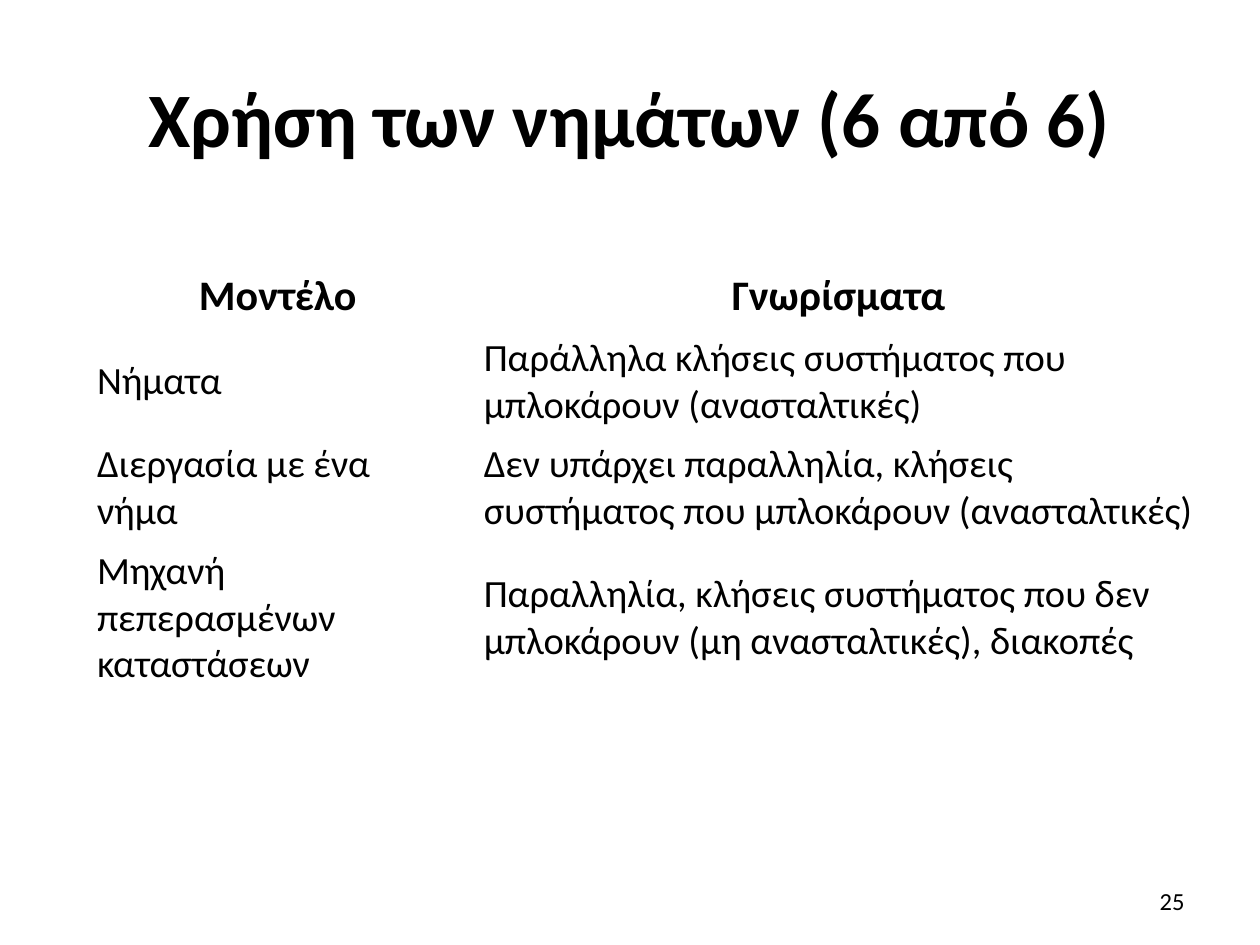
import dataclasses

import pptx
import pptx.dml.color
import pptx.enum.text
import pptx.util
from pptx.util import Inches

BLACK = pptx.dml.color.RGBColor(0x00, 0x00, 0x00)
FONT = "Calibri"
ALIGN = pptx.enum.text.PP_ALIGN
ANCHOR = pptx.enum.text.MSO_ANCHOR
COLUMN_WIDTHS = (3.07, 5.83)


@dataclasses.dataclass(frozen=True)
class TextStyle:
    size: int
    bold: bool = False
    align: ALIGN = ALIGN.LEFT


@dataclasses.dataclass(frozen=True)
class ModelRow:
    model: str
    traits: str
    height: float
    style: TextStyle = TextStyle(22)
    anchor: ANCHOR = ANCHOR.MIDDLE


ROWS = (
    ModelRow("Μοντέλο", "Γνωρίσματα", 0.5,
             TextStyle(24, True, ALIGN.CENTER), ANCHOR.TOP),
    ModelRow("Νήματα",
             "Παράλληλα κλήσεις συστήματος που μπλοκάρουν (ανασταλτικές)", 0.84),
    ModelRow("Διεργασία με ένα νήμα",
             "Δεν υπάρχει παραλληλία, κλήσεις συστήματος που μπλοκάρουν "
             "(ανασταλτικές)", 0.84),
    ModelRow("Μηχανή πεπερασμένων καταστάσεων",
             "Παραλληλία, κλήσεις συστήματος που δεν μπλοκάρουν "
             "(μη ανασταλτικές), διακοπές", 1.22),
)


def write_text(frame, text: str, style: TextStyle) -> None:
    frame.text = text
    frame.word_wrap = True
    para = frame.paragraphs[0]
    para.alignment = style.align
    para.font.name = FONT
    para.font.size = pptx.util.Pt(style.size)
    para.font.bold = style.bold
    para.font.color.rgb = BLACK


def add_title(page) -> None:
    title = page.shapes.title
    title.left, title.top = Inches(0.5), Inches(0.3)
    title.width, title.height = Inches(9), Inches(1.25)
    write_text(title.text_frame, "Χρήση των νημάτων (6 από 6)",
               TextStyle(44, True, ALIGN.CENTER))
    title.text_frame.vertical_anchor = ANCHOR.MIDDLE


def add_model_table(page) -> None:
    table = page.shapes.add_table(
        len(ROWS), len(COLUMN_WIDTHS), Inches(0.67), Inches(2.1),
        Inches(sum(COLUMN_WIDTHS)), Inches(sum(row.height for row in ROWS)),
    ).table
    table.first_row = False
    table.horz_banding = False
    for column, width in zip(table.columns, COLUMN_WIDTHS):
        column.width = Inches(width)
    for table_row, row in zip(table.rows, ROWS):
        table_row.height = Inches(row.height)
        for cell, text in zip(table_row.cells, (row.model, row.traits)):
            cell.fill.background()
            cell.vertical_anchor = row.anchor
            write_text(cell.text_frame, text, row.style)


def add_page_number(page) -> None:
    box = page.shapes.add_textbox(Inches(7.17), Inches(6.95),
                                  Inches(2.33), Inches(0.4))
    write_text(box.text_frame, "25", TextStyle(14, align=ALIGN.RIGHT))
    box.text_frame.vertical_anchor = ANCHOR.MIDDLE


def main() -> None:
    deck = pptx.Presentation()
    deck.slide_width, deck.slide_height = Inches(10), Inches(7.5)
    page = deck.slides.add_slide(deck.slide_layouts[5])
    add_title(page)
    add_model_table(page)
    add_page_number(page)
    deck.save("out.pptx")


if __name__ == "__main__":
    main()
